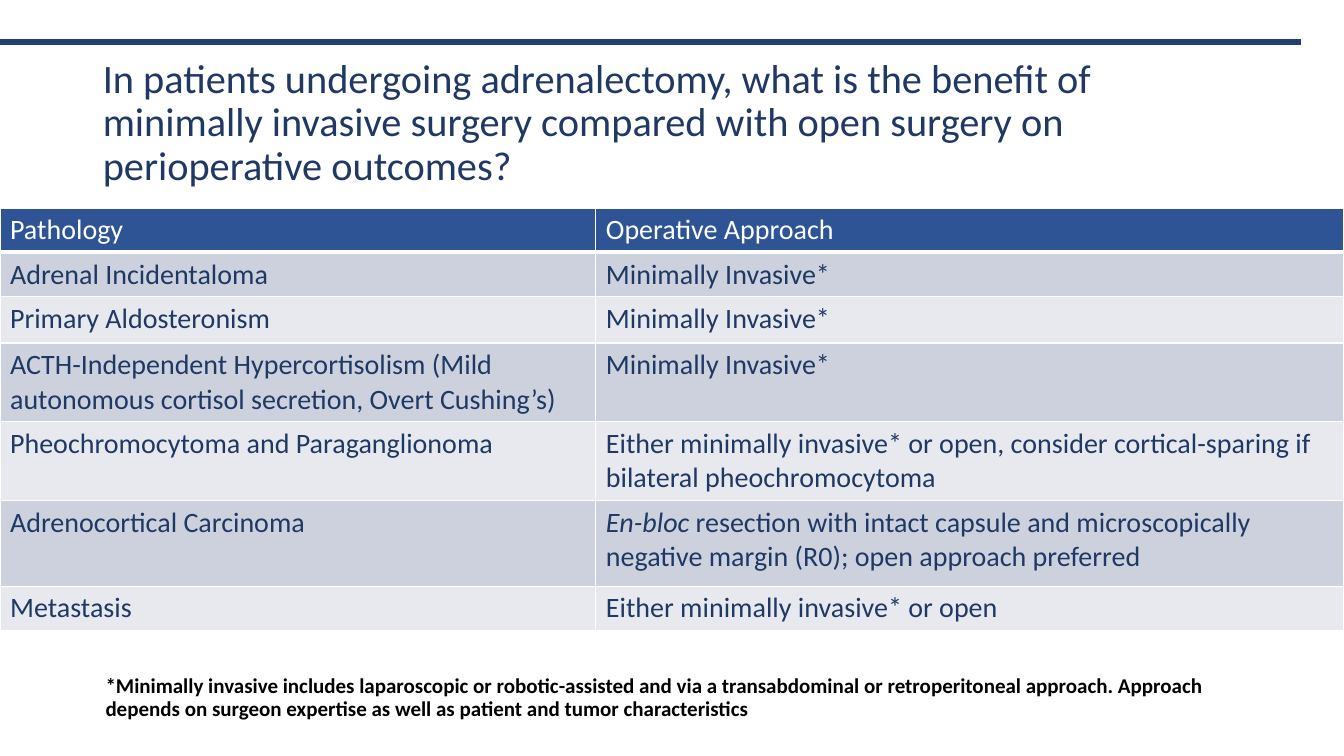
"""Build the slide on operative approach by adrenal pathology."""
from dataclasses import dataclass

from pptx import Presentation
from pptx.dml.color import RGBColor as Rgb
from pptx.enum.shapes import MSO_CONNECTOR as Connector
from pptx.enum.text import MSO_ANCHOR as Anchor, MSO_AUTO_SIZE as AutoSize, PP_ALIGN as Align
from pptx.oxml.ns import qn
from pptx.util import Inches, Pt
from lxml.etree import SubElement

QUESTION = (
    "In patients undergoing adrenalectomy, what is the benefit of minimally invasive "
    "surgery compared with open surgery on perioperative outcomes?"
)
FOOTNOTE = (
    "*Minimally invasive includes laparoscopic or robotic-assisted and via a transabdominal "
    "or retroperitoneal approach. Approach depends on surgeon expertise as well as patient "
    "and tumor characteristics"
)
ITALIC_TERM = "En-bloc"
APPROACHES = [
    ("Pathology", "Operative Approach"),
    ("Adrenal Incidentaloma", "Minimally Invasive*"),
    ("Primary Aldosteronism", "Minimally Invasive*"),
    ("ACTH-Independent Hypercortisolism (Mild autonomous cortisol secretion, Overt Cushing’s)",
     "Minimally Invasive*"),
    ("Pheochromocytoma and Paraganglionoma",
     "Either minimally invasive* or open, consider cortical-sparing if bilateral pheochromocytoma"),
    ("Adrenocortical Carcinoma",
     "En-bloc resection with intact capsule and microscopically negative margin (R0); "
     "open approach preferred"),
    ("Metastasis", "Either minimally invasive* or open"),
]

WIDTH, HEIGHT = Inches(13.33), Inches(7.5)
COLUMN_INCHES = (5.91, 7.42)
ROW_INCHES = (0.43, 0.43, 0.46, 0.6, 0.7, 0.85, 0.43)


@dataclass(frozen=True)
class Theme:
    font: str = "Calibri"
    navy: str = "1F3864"
    rule: str = "233F70"
    header: str = "2F5496"
    bands: tuple = ("E8E9EF", "CDD1DD")
    white: str = "FFFFFF"
    black: str = "000000"
    question_size: float = 28.8
    cell_size: float = 20
    footnote_size: float = 15
    rule_width: float = 4.5
    border: float = 1
    header_border: float = 3


THEME = Theme()


def apply(target, values):
    for name, value in values.items():
        setattr(target, name, value)


def write(paragraph, text, size, color, bold=False):
    before, term, after = text.partition(ITALIC_TERM)
    for part in filter(None, (before, term, after)):
        run = paragraph.add_run()
        run.text = part
        apply(run.font, {"name": THEME.font, "size": Pt(size), "bold": bold,
                         "italic": part == ITALIC_TERM})
        run.font.color.rgb = Rgb.from_string(color)


def place(holder, left, top, width, height, anchor):
    apply(holder, {"left": int(WIDTH * left), "top": int(HEIGHT * top),
                   "width": int(WIDTH * width), "height": int(HEIGHT * height)})
    apply(holder.text_frame, {"word_wrap": True, "auto_size": AutoSize.NONE,
                              "vertical_anchor": anchor})
    paragraph = holder.text_frame.paragraphs[0]
    apply(paragraph, {"alignment": Align.LEFT, "line_spacing": 0.9, "space_before": Pt(0)})
    return paragraph


def draw_borders(cell, widths):
    properties = cell._tc.get_or_add_tcPr()
    for side, width in widths.items():
        edge = SubElement(properties, qn(f"a:ln{side}"), w=str(Pt(width)))
        SubElement(SubElement(edge, qn("a:solidFill")), qn("a:srgbClr"), val=THEME.white)


def add_rule(slide):
    y = int(HEIGHT * 0.056)
    rule = slide.shapes.add_connector(Connector.STRAIGHT, 0, y, int(WIDTH * 0.968), y)
    rule.line.color.rgb = Rgb.from_string(THEME.rule)
    rule.line.width = Pt(THEME.rule_width)
    SubElement(rule._element.spPr, qn("a:effectLst"))


def add_approaches(slide):
    table = slide.shapes.add_table(
        len(APPROACHES), len(COLUMN_INCHES), 0, int(HEIGHT * 0.275),
        WIDTH, Inches(sum(ROW_INCHES))).table
    apply(table, {"first_row": False, "horz_banding": False})
    for column, inches in zip(table.columns, COLUMN_INCHES):
        column.width = Inches(inches)
    for row, inches in zip(table.rows, ROW_INCHES):
        row.height = Inches(inches)
    for r, entries in enumerate(APPROACHES):
        is_header = r == 0
        top = THEME.header_border if r == 1 else THEME.border
        bottom = THEME.header_border if is_header else THEME.border
        fill = THEME.header if is_header else THEME.bands[r % 2]
        color = THEME.white if is_header else THEME.navy
        for c, entry in enumerate(entries):
            cell = table.cell(r, c)
            draw_borders(cell, {"L": THEME.border, "R": THEME.border, "T": top, "B": bottom})
            cell.fill.solid()
            cell.fill.fore_color.rgb = Rgb.from_string(fill)
            write(cell.text_frame.paragraphs[0], entry, THEME.cell_size, color)


def main():
    deck = Presentation()
    apply(deck, {"slide_width": WIDTH, "slide_height": HEIGHT})
    slide = deck.slides.add_slide(deck.slide_layouts[1])
    add_rule(slide)
    question = place(slide.shapes.title, 0.069, 0.067, 0.863, 0.193, Anchor.MIDDLE)
    write(question, QUESTION, THEME.question_size, THEME.navy)
    add_approaches(slide)
    footnote = place(slide.placeholders[1], 0.062, 0.887, 0.863, 0.013, Anchor.TOP)
    indents = footnote._p.get_or_add_pPr()
    indents.set("marL", str(Inches(0.12)))
    indents.set("indent", "0")
    SubElement(indents, qn("a:buNone"))
    write(footnote, FOOTNOTE, THEME.footnote_size, THEME.black, bold=True)
    deck.save("out.pptx")


if __name__ == "__main__":
    main()
